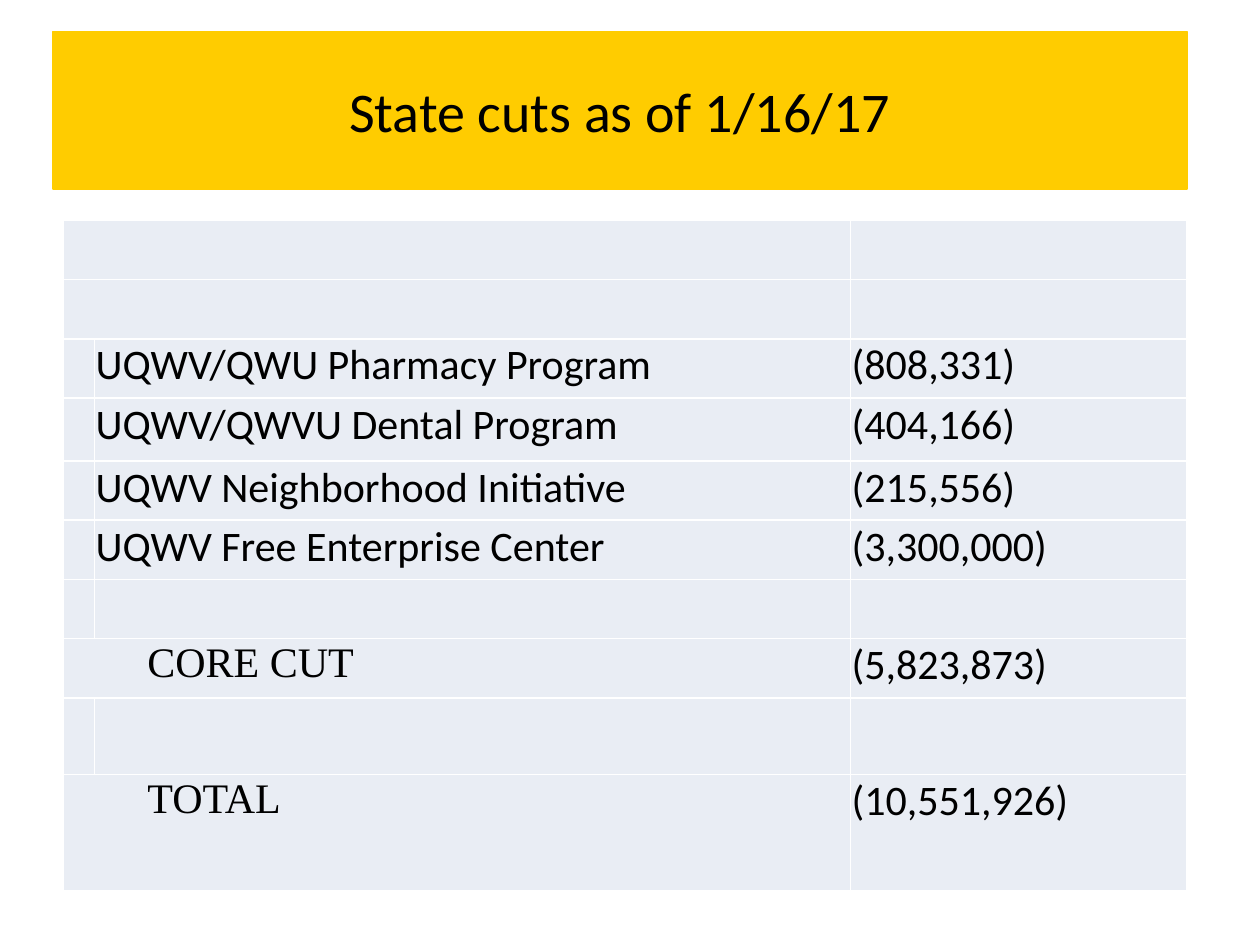
"""Build the slide listing state cuts as of 1/16/17."""
import pptx
import pptx.dml.color
import pptx.enum.text
import pptx.oxml
import pptx.oxml.ns
import pptx.util

Inches = pptx.util.Inches
Pt = pptx.util.Pt
RGBColor = pptx.dml.color.RGBColor

GOLD = RGBColor(0xFF, 0xCC, 0x00)
PALE = RGBColor(0xE9, 0xED, 0xF4)
BLACK = RGBColor(0, 0, 0)
WHITE = RGBColor(0xFF, 0xFF, 0xFF)

TITLE = "State cuts as of 1/16/17"
COLUMN_WIDTHS = (0.25, 6, 2.67)
ROWS = [
    (0.47, True, "", ""),
    (0.47, True, "", ""),
    (0.47, False, "UQWV/QWU Pharmacy Program", "(808,331)"),
    (0.5, False, "UQWV/QWVU Dental Program", "(404,166)"),
    (0.47, False, "UQWV Neighborhood Initiative", "(215,556)"),
    (0.47, False, "UQWV Free Enterprise Center", "(3,300,000)"),
    (0.47, False, "", ""),
    (0.47, True, "CORE CUT", "(5,823,873)"),
    (0.61, False, "", ""),
    (0.92, True, "TOTAL", "(10,551,926)"),
]
MARGIN = 0.01
SUMMARY_INDENT = 0.67


def style_run(paragraph, size, font):
    for run in paragraph.runs:
        run.font.size = Pt(size)
        run.font.name = font
        run.font.color.rgb = BLACK


def paint_cell(cell):
    properties = cell._tc.get_or_add_tcPr()
    for side in ("lnL", "lnR", "lnT", "lnB"):
        properties.append(pptx.oxml.parse_xml(
            f'<a:{side} {pptx.oxml.ns.nsdecls("a")} w="{Pt(1)}"><a:solidFill>'
            f'<a:srgbClr val="{WHITE}"/></a:solidFill></a:{side}>'))
    cell.fill.solid()
    cell.fill.fore_color.rgb = PALE


def write_cell(cell, words, font="Calibri", left=MARGIN):
    if not words:
        return
    cell.text_frame.text = words
    cell.margin_left = Inches(left)
    cell.margin_right = cell.margin_top = Inches(MARGIN)
    cell.margin_bottom = 0
    style_run(cell.text_frame.paragraphs[0], 24, font)


def add_title(slide):
    title = slide.shapes.title
    title.left, title.top = Inches(0.42), Inches(0.25)
    title.width, title.height = Inches(9), Inches(1.25)
    title.fill.solid()
    title.fill.fore_color.rgb = GOLD
    title.line.color.rgb = GOLD
    title.line.width = Pt(0.75)
    title.text_frame.text = TITLE
    title.text_frame.vertical_anchor = pptx.enum.text.MSO_ANCHOR.MIDDLE
    heading = title.text_frame.paragraphs[0]
    heading.alignment = pptx.enum.text.PP_ALIGN.CENTER
    style_run(heading, 32, "Calibri")


def add_cuts(slide):
    cuts = slide.shapes.add_table(
        len(ROWS), len(COLUMN_WIDTHS), Inches(0.5), Inches(1.75),
        Inches(sum(COLUMN_WIDTHS)), Inches(sum(row[0] for row in ROWS))).table
    cuts.first_row = cuts.horz_banding = False
    for column, width in zip(cuts.columns, COLUMN_WIDTHS):
        column.width = Inches(width)
    for index, (height, merged, label, amount) in enumerate(ROWS):
        cuts.rows[index].height = Inches(height)
        marker, name, value = cuts.rows[index].cells
        for cell in (marker, name, value):
            paint_cell(cell)
        if merged:
            marker.merge(name)
            write_cell(marker, label, "Times New Roman", SUMMARY_INDENT)
        else:
            write_cell(name, label)
        write_cell(value, amount)


def main():
    deck = pptx.Presentation()
    deck.slide_width, deck.slide_height = Inches(10), Inches(7.5)
    slide = deck.slides.add_slide(deck.slide_layouts[5])
    add_title(slide)
    add_cuts(slide)
    deck.save("out.pptx")


if __name__ == "__main__":
    main()
